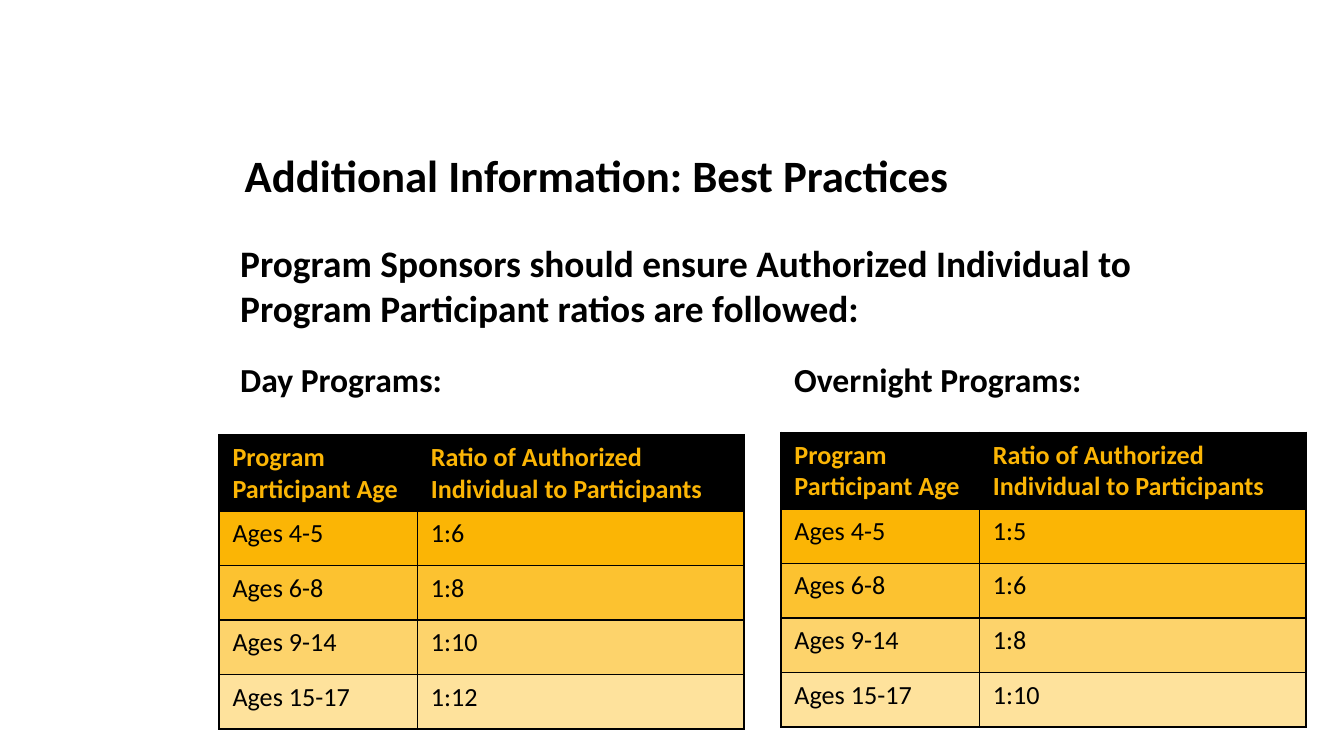
from lxml import etree
from pptx import Presentation
from pptx import util as u
from pptx.dml.color import RGBColor
from pptx.enum import text
from pptx.oxml.ns import qn

COLORS = {"ink": "000000", "gold": "FBB505", "gold_mid": "FCC230",
          "gold_light": "FDD36B", "gold_pale": "FEE29C"}
BANDS = ["ink", "gold", "gold_mid", "gold_light", "gold_pale"]
HEADINGS = ("Program Participant Age", "Ratio of Authorized Individual to Participants")
AGES = ["Ages 4-5", "Ages 6-8", "Ages 9-14", "Ages 15-17"]
TEXT_LEFT = 4.29
OVERNIGHT_LEFT = 14.76
LABEL_TOP = 6.65


class SlideBuilder:
    font = "Calibri"
    column_widths = (3.75, 6.17)
    row_height = 1.03

    def __init__(self, slide):
        self.slide = slide

    def style_text(self, frame, wording, size, color="ink", bold=True):
        frame.text = wording
        for run in frame.paragraphs[0].runs:
            run.font.name = self.font
            run.font.size = u.Pt(size)
            run.font.bold = bold
            run.font.color.rgb = RGBColor.from_string(COLORS[color])

    def title(self, wording, left, top, width, height):
        heading = self.slide.shapes.title
        heading.left, heading.top = u.Cm(left), u.Cm(top)
        heading.width, heading.height = u.Cm(width), u.Cm(height)
        frame = heading.text_frame
        self.style_text(frame, wording, 24)
        frame.word_wrap = False
        frame.auto_size = text.MSO_AUTO_SIZE.SHAPE_TO_FIT_TEXT
        frame.vertical_anchor = text.MSO_ANCHOR.TOP
        frame.paragraphs[0].alignment = text.PP_ALIGN.CENTER

    def label(self, wording, left, top, width, height, size, wrap=True):
        box = self.slide.shapes.add_textbox(u.Cm(left), u.Cm(top), u.Cm(width), u.Cm(height))
        frame = box.text_frame
        frame.word_wrap = wrap
        frame.auto_size = text.MSO_AUTO_SIZE.SHAPE_TO_FIT_TEXT
        self.style_text(frame, wording, size)

    def borders(self, cell):
        properties = cell._tc.get_or_add_tcPr()
        for index, side in enumerate(("a:lnL", "a:lnR", "a:lnT", "a:lnB")):
            line = etree.Element(qn(side), w=str(u.Pt(1)))
            fill = etree.SubElement(line, qn("a:solidFill"))
            etree.SubElement(fill, qn("a:srgbClr"), val=COLORS["ink"])
            properties.insert(index, line)

    def ratio_table(self, ratios, left, top):
        rows = [HEADINGS, *zip(AGES, ratios)]
        table = self.slide.shapes.add_table(
            len(rows), len(HEADINGS), u.Cm(left), u.Cm(top),
            u.Cm(sum(self.column_widths)), u.Cm(self.row_height * len(rows))).table
        for column, width in zip(table.columns, self.column_widths):
            column.width = u.Cm(width)
        for row_index, (band, entries) in enumerate(zip(BANDS, rows)):
            table.rows[row_index].height = u.Cm(self.row_height)
            is_header = row_index == 0
            for column_index, wording in enumerate(entries):
                cell = table.cell(row_index, column_index)
                cell.fill.solid()
                cell.fill.fore_color.rgb = RGBColor.from_string(COLORS[band])
                self.borders(cell)
                self.style_text(cell.text_frame, wording, 14,
                                "gold" if is_header else "ink", is_header)


def main():
    deck = Presentation()
    deck.slide_width, deck.slide_height = u.Cm(25.4), u.Cm(14.28)
    builder = SlideBuilder(deck.slides.add_slide(deck.slide_layouts[5]))

    builder.title("Additional Information: Best Practices", TEXT_LEFT, 2.67, 13.97, 1.27)
    builder.label("Day Programs:", TEXT_LEFT, LABEL_TOP, 4.5, 1.02, 18)
    builder.ratio_table(["1:6", "1:8", "1:10", "1:12"], 4.14, 8.21)
    builder.ratio_table(["1:5", "1:6", "1:8", "1:10"], OVERNIGHT_LEFT, 8.17)
    builder.label("Overnight Programs:", OVERNIGHT_LEFT, LABEL_TOP, 6, 1.02, 18, wrap=False)
    builder.label("Program Sponsors should ensure Authorized Individual to "
                  "Program Participant ratios are followed:", TEXT_LEFT, 4.42, 18.36, 1.96, 20)

    deck.save("out.pptx")


if __name__ == "__main__":
    main()
